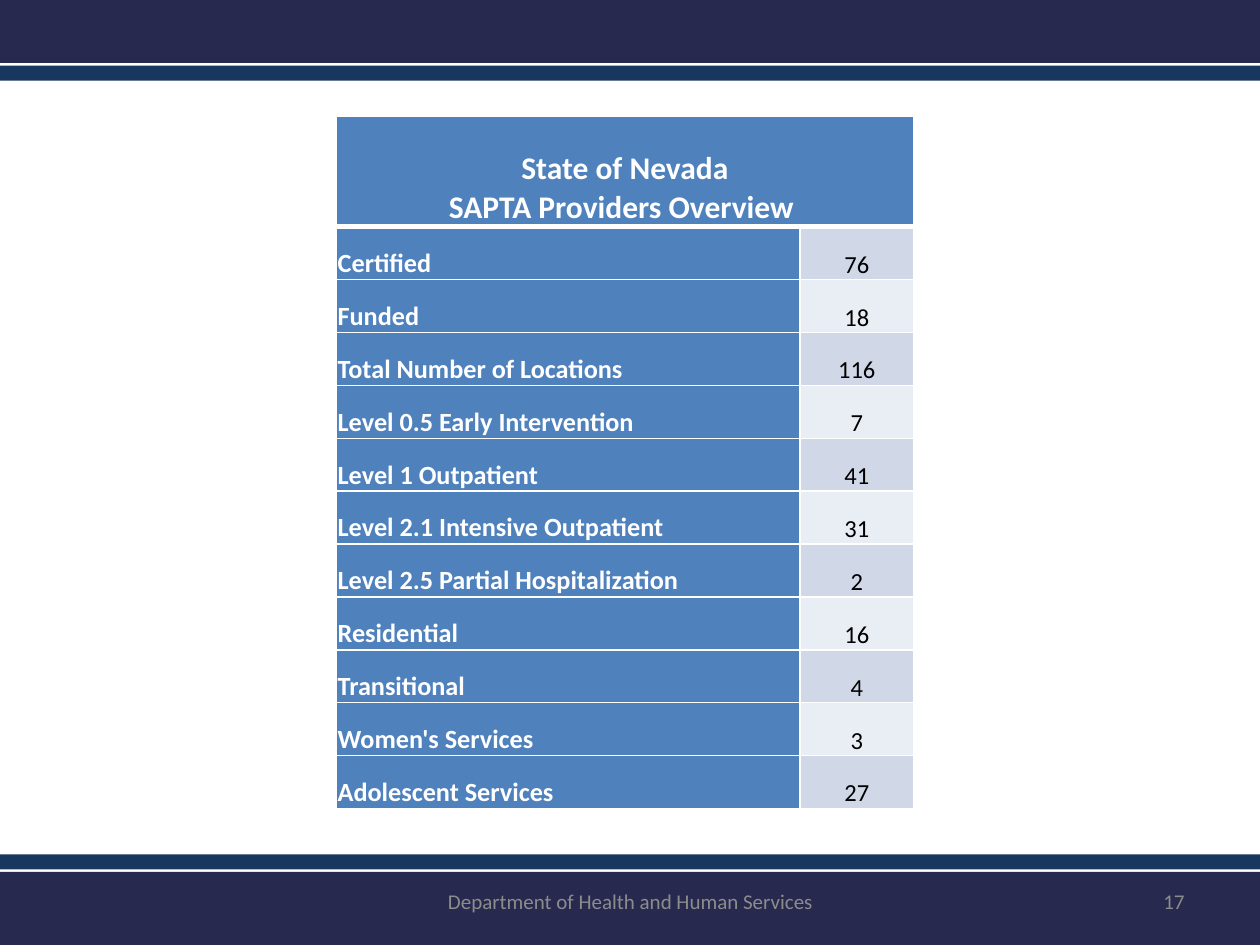
from lxml import etree
from pptx import Presentation
from pptx.dml.color import RGBColor
from pptx.enum.shapes import MSO_SHAPE
from pptx.enum.text import MSO_ANCHOR, PP_ALIGN
from pptx.oxml.ns import qn
from pptx.util import Inches, Pt

RECT = MSO_SHAPE.RECTANGLE
LEFT, CENTER, RIGHT = PP_ALIGN.LEFT, PP_ALIGN.CENTER, PP_ALIGN.RIGHT
BOTTOM, MIDDLE = MSO_ANCHOR.BOTTOM, MSO_ANCHOR.MIDDLE

INDIGO = RGBColor(0x28, 0x29, 0x4E)
NAVY = RGBColor(0x17, 0x37, 0x5E)
BLUE = RGBColor(0x4F, 0x81, 0xBD)
BAND_DARK = RGBColor(0xD0, 0xD8, 0xE8)
BAND_LIGHT = RGBColor(0xE9, 0xED, 0xF4)
WHITE = RGBColor(0xFF, 0xFF, 0xFF)
BLACK = RGBColor(0, 0, 0)
GRAY = RGBColor(0x8C, 0x8C, 0x8C)

FONT = "Calibri"
WIDTH, HEIGHT = 10, 7.5
TABLE_LEFT, TABLE_TOP = 2.67, 0.92
COL_WIDTHS = (3.68, 0.9)
HEADER_HEIGHT, ROW_HEIGHT = 0.88, 0.42
FOOTER_TOP, FOOTER_HEIGHT = 6.95, 0.4

TITLE_LINES = ("State of Nevada", "SAPTA Providers Overview ")
PROVIDERS = (
    ("Certified", 76),
    ("Funded", 18),
    ("Total Number of Locations", 116),
    ("Level 0.5 Early Intervention", 7),
    ("Level 1 Outpatient", 41),
    ("Level 2.1 Intensive Outpatient", 31),
    ("Level 2.5 Partial Hospitalization", 2),
    ("Residential", 16),
    ("Transitional", 4),
    ("Women's Services", 3),
    ("Adolescent Services", 27),
)


def add_band(slide, top, height, color):
    """Draw a bar across the full slide width."""
    sp = slide.shapes.add_shape(RECT, 0, Inches(top), Inches(WIDTH), Inches(height))
    sp.shadow.inherit = False
    sp.fill.solid()
    sp.fill.fore_color.rgb = color
    sp.line.fill.background()


def write_lines(tf, lines, size, color, align, bold=False):
    """Fill the first paragraph, with a line break between the lines."""
    p = tf.paragraphs[0]
    p.alignment = align
    for i, line in enumerate(lines):
        if i:
            p.add_line_break()
        r = p.add_run()
        r.text = line
        r.font.name = FONT
        r.font.size = Pt(size)
        r.font.bold = bold
        r.font.color.rgb = color


def set_borders(cell, top=1, bottom=1):
    """Give a cell white borders, with widths in points."""
    tc_pr = cell._tc.get_or_add_tcPr()
    widths = {"a:lnL": 1, "a:lnR": 1, "a:lnT": top, "a:lnB": bottom}
    for i, (tag, width) in enumerate(widths.items()):
        ln = etree.Element(qn(tag), w=str(Pt(width)))
        fill = etree.SubElement(ln, qn("a:solidFill"))
        etree.SubElement(fill, qn("a:srgbClr"), val=str(WHITE))
        tc_pr.insert(i, ln)


def style_cell(cell, fill, top=1, bottom=1):
    cell.margin_left = cell.margin_right = cell.margin_top = Inches(0.01)
    cell.margin_bottom = 0
    cell.vertical_anchor = BOTTOM
    cell.fill.solid()
    cell.fill.fore_color.rgb = fill
    set_borders(cell, top, bottom)


def add_provider_table(slide):
    height = HEADER_HEIGHT + ROW_HEIGHT * len(PROVIDERS)
    table = slide.shapes.add_table(
        len(PROVIDERS) + 1, len(COL_WIDTHS), Inches(TABLE_LEFT),
        Inches(TABLE_TOP), Inches(sum(COL_WIDTHS)), Inches(height)).table
    for col, width in zip(table.columns, COL_WIDTHS):
        col.width = Inches(width)
    for i, row in enumerate(table.rows):
        row.height = Inches(ROW_HEIGHT if i else HEADER_HEIGHT)

    header = table.cell(0, 0)
    header.merge(table.cell(0, 1))
    for cell in table.rows[0].cells:
        style_cell(cell, BLUE, bottom=3)
    write_lines(header.text_frame, TITLE_LINES, 18, WHITE, CENTER, bold=True)

    for i, (name, count) in enumerate(PROVIDERS, start=1):
        label, value = table.rows[i].cells
        top = 3 if i == 1 else 1
        style_cell(label, BLUE, top)
        style_cell(value, BAND_DARK if i % 2 else BAND_LIGHT, top)
        write_lines(label.text_frame, [name], 15, WHITE, LEFT, bold=True)
        write_lines(value.text_frame, [str(count)], 14, BLACK, CENTER)


def add_footer(slide, left, width, text, align):
    box = slide.shapes.add_textbox(Inches(left), Inches(FOOTER_TOP),
                                   Inches(width), Inches(FOOTER_HEIGHT))
    tf = box.text_frame
    tf.word_wrap = True
    tf.vertical_anchor = MIDDLE
    write_lines(tf, [text], 12, GRAY, align)


def main():
    prs = Presentation()
    prs.slide_width, prs.slide_height = Inches(WIDTH), Inches(HEIGHT)
    slide = prs.slides.add_slide(prs.slide_layouts[6])
    add_band(slide, 0, 0.5, INDIGO)
    add_band(slide, 0.52, 0.12, NAVY)
    add_band(slide, 6.92, HEIGHT - 6.92, INDIGO)
    add_band(slide, 6.78, 0.12, NAVY)
    add_provider_table(slide)
    add_footer(slide, 3.42, 3.17, "Department of Health and Human Services", CENTER)
    add_footer(slide, 7.17, 2.33, "17", RIGHT)
    prs.save("out.pptx")


if __name__ == "__main__":
    main()
